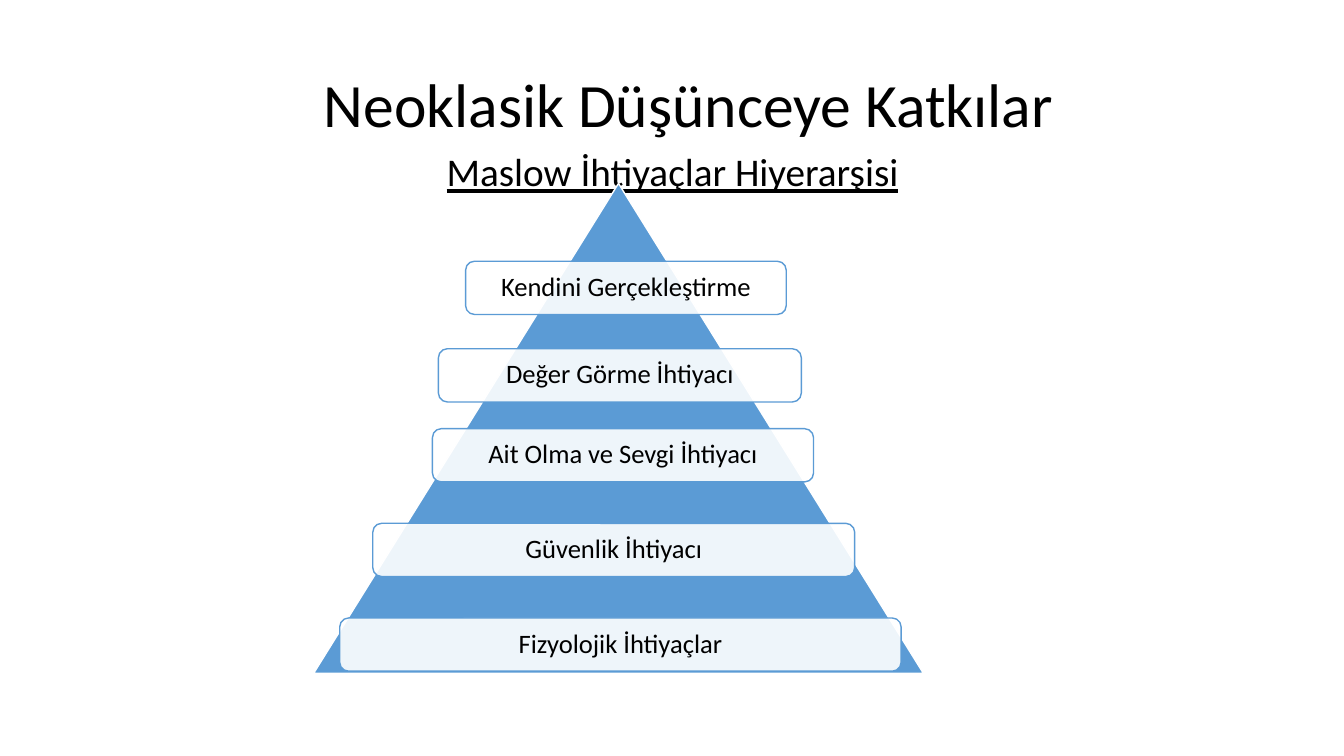
from pptx import Presentation
from pptx.dml.color import RGBColor
from pptx.enum import shapes, text
from pptx.oxml import parse_xml
from pptx.oxml.ns import nsdecls, qn
from pptx.util import Pt

HUES = {"ink": "000000", "blue": "5B9BD5", "white": "FFFFFF"}
FONT = "Calibri"

# Label, left, top, width
NEEDS = [
    ("Kendini Gerçekleştirme", 332.6, 186.6, 229),
    ("Değer Görme İhtiyacı", 313.2, 249.1, 259.2),
    ("Ait Olma ve Sevgi İhtiyacı", 308.9, 306.2, 272.2),
    ("Güvenlik İhtiyacı", 266.3, 373.8, 344.2),
    ("Fizyolojik İhtiyaçlar", 242.7, 441.4, 401),
]
BAR = 38


def hue(name):
    return RGBColor.from_string(HUES[name])


def write(shape, words, size, align="CENTER", anchor="MIDDLE", line=False, pad=None):
    frame = shape.text_frame
    frame.word_wrap = True
    frame.auto_size = text.MSO_AUTO_SIZE.NONE
    frame.vertical_anchor = text.MSO_ANCHOR[anchor]
    if pad is not None:
        frame.margin_left = frame.margin_right = Pt(pad)
        frame.margin_top = frame.margin_bottom = Pt(pad)
    para = frame.paragraphs[0]
    para.alignment = text.PP_ALIGN[align]
    para.line_spacing = 0.9
    run = para.add_run()
    run.text = words
    font = run.font
    font.name, font.size = FONT, Pt(size)
    font.underline = line
    font.color.rgb = hue("ink")


def draw(slide, kind, box, fill, line, alpha=None):
    """Add a preset shape; alpha is its opacity in percent."""
    shape = slide.shapes.add_shape(kind, *map(Pt, box))
    shape.shadow.inherit = False
    shape.fill.solid()
    shape.fill.fore_color.rgb = hue(fill)
    shape.line.color.rgb = hue(line)
    shape.line.width = Pt(1)
    if alpha is not None:
        color = shape.fill._xPr.find(qn("a:solidFill"))[0]
        color.append(parse_xml(f'<a:alpha {nsdecls("a")} val="{alpha * 1000}"/>'))
    return shape


def head(slide):
    title = slide.shapes.title
    title.left, title.top = Pt(224), Pt(24.5)
    title.width, title.height = Pt(559.5), Pt(104.4)
    write(title, "Neoklasik Düşünceye Katkılar", 44, align="LEFT")
    box = slide.shapes.add_textbox(Pt(20.2), Pt(105.8), Pt(920.2), Pt(399.6))
    write(box, "Maslow İhtiyaçlar Hiyerarşisi", 28, anchor="TOP", line=True)


def pyramid(slide):
    kinds = shapes.MSO_SHAPE
    draw(slide, kinds.ISOSCELES_TRIANGLE, (224, 131, 435.6, 350), "blue", "white")
    for label, left, top, width in NEEDS:
        bar = draw(slide, kinds.ROUNDED_RECTANGLE, (left, top, width, BAR),
                   "white", "blue", alpha=90)
        write(bar, label, 19, pad=5.8)


def main():
    deck = Presentation()
    deck.slide_width, deck.slide_height = Pt(960), Pt(540)
    slide = deck.slides.add_slide(deck.slide_layouts[5])
    head(slide)
    pyramid(slide)
    deck.save("out.pptx")


if __name__ == "__main__":
    main()
